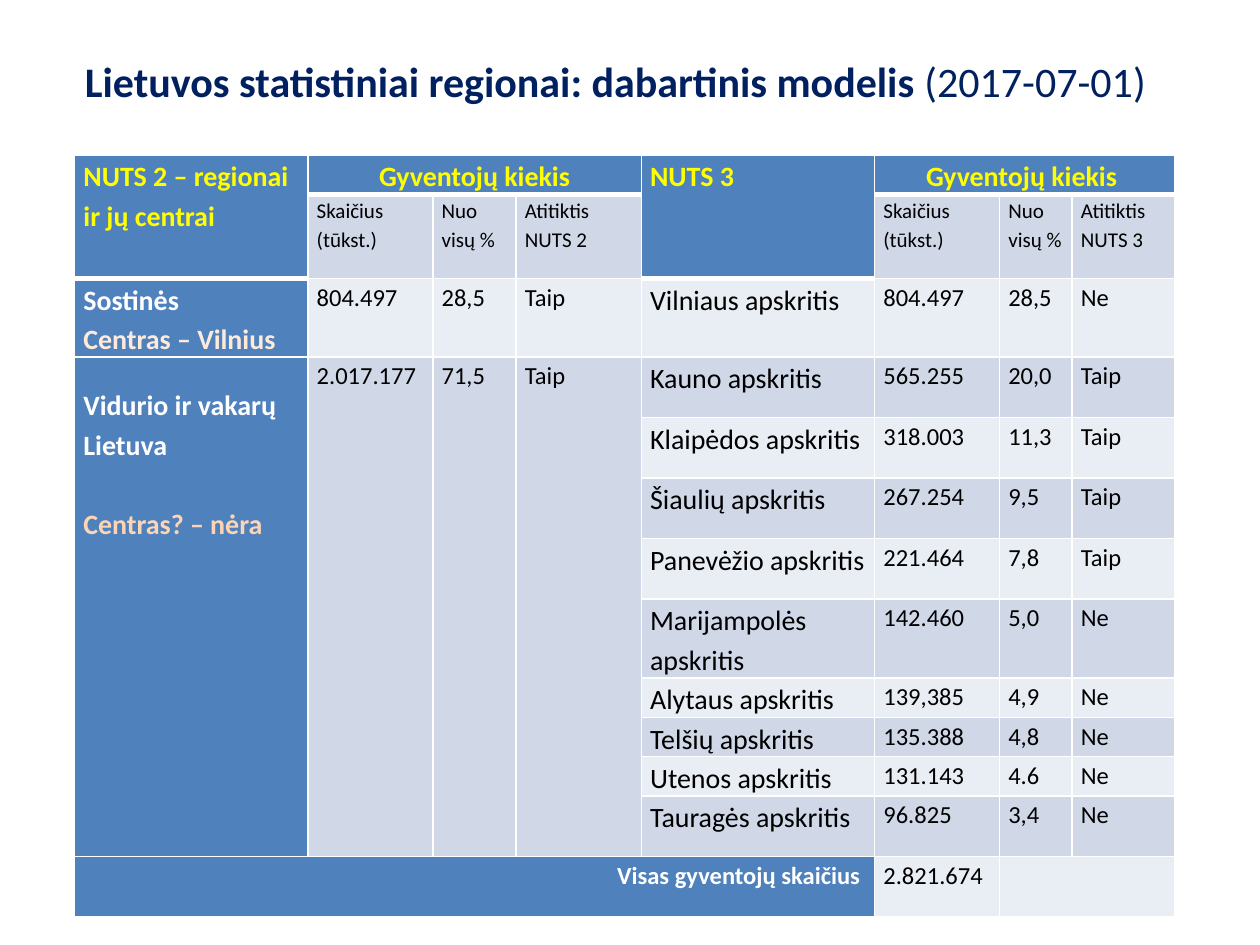
from lxml import etree
from pptx import Presentation
from pptx import util as u
from pptx.dml.color import RGBColor
from pptx.enum import text
from pptx.oxml import ns

NAVY = RGBColor(0x00, 0x20, 0x60)
BLUE = RGBColor(0x4F, 0x81, 0xBD)
DARK_BAND = RGBColor(0xD0, 0xD8, 0xE8)
LIGHT_BAND = RGBColor(0xE9, 0xED, 0xF4)
YELLOW = RGBColor(0xFF, 0xFF, 0x00)
WHITE = RGBColor(0xFF, 0xFF, 0xFF)
BLACK = RGBColor(0x00, 0x00, 0x00)
PALE_ORANGE = RGBColor(0xFD, 0xEA, 0xDA)
ORANGE = RGBColor(0xFC, 0xD5, 0xB5)

LEFT, CENTER, RIGHT = (text.PP_ALIGN.LEFT, text.PP_ALIGN.CENTER, text.PP_ALIGN.RIGHT)

COLUMN_WIDTHS = [133.3, 71.4, 47.6, 71.6, 133.3, 71.4, 41.5, 58.7]
ROW_HEIGHTS = [22.5, 48, 45, 34.6, 34.6, 34.6, 34.6, 45, 22.5, 22.5, 22.5, 34.6, 34.6]
MERGES = [
    (0, 0, 1, 0), (0, 1, 0, 3), (0, 4, 1, 4), (0, 5, 0, 7),
    *[(3, column, 11, column) for column in range(4)],
    (12, 0, 12, 4), (12, 6, 12, 7),
]
COUNTIES = [
    ("Vilniaus apskritis", "804.497", "28,5", "Ne"),
    ("Kauno apskritis", "565.255", "20,0", "Taip"),
    ("Klaipėdos apskritis", "318.003", "11,3", "Taip"),
    ("Šiaulių apskritis", "267.254", "9,5", "Taip"),
    ("Panevėžio apskritis", "221.464", "7,8", "Taip"),
    ("Marijampolės apskritis", "142.460", "5,0", "Ne"),
    ("Alytaus apskritis", "139,385", "4,9", "Ne"),
    ("Telšių apskritis", "135.388", "4,8", "Ne"),
    ("Utenos apskritis", "131.143", "4.6", "Ne"),
    ("Tauragės apskritis", "96.825", "3,4", "Ne"),
]
REGION_FIGURES = {2: ("804.497", "28,5", "Taip"), 3: ("2.017.177", "71,5", "Taip")}


class SlideBuilder:
    font_name = "Calibri"
    line_spacing = 1.15
    inset = 5

    def __init__(self, slide):
        self.slide = slide

    def style(self, paragraph, size, color, bold=False, align=LEFT):
        paragraph.alignment = align
        font = paragraph.font
        font.name, font.size, font.bold = self.font_name, u.Pt(size), bold
        font.color.rgb = color

    def title(self, left, top, width, height, bold_part, plain_part):
        shape = self.slide.shapes.add_textbox(u.Pt(left), u.Pt(top), u.Pt(width), u.Pt(height))
        frame = shape.text_frame
        frame.word_wrap = True
        frame.vertical_anchor = text.MSO_ANCHOR.MIDDLE
        paragraph = frame.paragraphs[0]
        self.style(paragraph, 24, NAVY, align=CENTER)
        for content, bold in ((bold_part, True), (plain_part, False)):
            run = paragraph.add_run()
            run.text = content
            run.font.bold = bold

    def table(self, left, top, widths, heights, merges):
        frame = self.slide.shapes.add_table(
            len(heights), len(widths), u.Pt(left), u.Pt(top),
            u.Pt(sum(widths)), u.Pt(sum(heights)))
        table = frame.table
        table.first_row = table.horz_banding = False
        for column, width in zip(table.columns, widths):
            column.width = u.Pt(width)
        for row, height in zip(table.rows, heights):
            row.height = u.Pt(height)
        for first_row, first_column, last_row, last_column in merges:
            table.cell(first_row, first_column).merge(table.cell(last_row, last_column))
        return table

    def cell(self, cell, fill, bottom_width=1):
        cell.margin_left = cell.margin_right = u.Pt(self.inset)
        cell.margin_top = cell.margin_bottom = 0
        self.style(cell.text_frame.paragraphs[0], 12, BLACK)
        properties = cell._tc.get_or_add_tcPr()
        for side, width in (("L", 1), ("R", 1), ("T", 1), ("B", bottom_width)):
            line = etree.SubElement(properties, ns.qn(f"a:ln{side}"), w=str(u.Pt(width)))
            solid = etree.SubElement(line, ns.qn("a:solidFill"))
            etree.SubElement(solid, ns.qn("a:srgbClr"), val=str(WHITE))
        cell.fill.solid()
        cell.fill.fore_color.rgb = fill

    def cell_text(self, cell, content, size, color=BLACK, bold=False, align=LEFT):
        paragraph = cell.text_frame.paragraphs[0]
        if paragraph.text:
            paragraph = cell.text_frame.add_paragraph()
        paragraph.text = content
        paragraph.line_spacing = self.line_spacing
        self.style(paragraph, size, color, bold, align)
        return paragraph


def cell_fill(row, column):
    if row == 0 or column == 0 or (row == 1 and column == 4) or (row == 12 and column < 5):
        return BLUE
    return DARK_BAND if row % 2 else LIGHT_BAND


def main():
    presentation = Presentation()
    presentation.slide_width, presentation.slide_height = u.Pt(720), u.Pt(540)
    builder = SlideBuilder(presentation.slides.add_slide(presentation.slide_layouts[6]))
    builder.title(25.2, 21, 653, 50,
                  "Lietuvos statistiniai regionai: dabartinis modelis ", "(2017-07-01)")
    table = builder.table(42.7, 88.6, COLUMN_WIDTHS, ROW_HEIGHTS, MERGES)

    for row in range(len(ROW_HEIGHTS)):
        for column in range(len(COLUMN_WIDTHS)):
            header = row == 0 or (row == 1 and column in (0, 4))
            builder.cell(table.cell(row, column), cell_fill(row, column), 3 if header else 1)

    headers = [
        (0, "NUTS 2 – regionai ir jų centrai", LEFT), (1, "Gyventojų kiekis", CENTER),
        (4, "NUTS 3", LEFT), (5, "Gyventojų kiekis ", CENTER),
    ]
    for column, content, align in headers:
        builder.cell_text(table.cell(0, column), content, 16, YELLOW, True, align)
    for start, level in ((1, "NUTS 2"), (5, "NUTS 3")):
        for offset, content in enumerate(("Skaičius (tūkst.)", "Nuo visų %", f"Atitiktis {level}")):
            builder.cell_text(table.cell(1, start + offset), content, 12)

    capital, rest = table.cell(2, 0), table.cell(3, 0)
    builder.cell_text(capital, "Sostinės", 16, WHITE, True)
    builder.cell_text(capital, "Centras – Vilnius", 16, PALE_ORANGE, True)
    rest.margin_top = u.Pt(15.5)
    builder.cell_text(rest, "Vidurio ir vakarų Lietuva", 16, WHITE, True)
    builder.cell_text(rest, "Centras? – nėra", 16, ORANGE, True).space_before = u.Pt(22.5)

    for row, figures in REGION_FIGURES.items():
        for column, figure in enumerate(figures, 1):
            builder.cell_text(table.cell(row, column), figure, 14)
    for row, (county, *figures) in enumerate(COUNTIES, 2):
        builder.cell_text(table.cell(row, 4), county, 16)
        for column, figure in enumerate(figures, 5):
            builder.cell_text(table.cell(row, column), figure, 14)

    builder.cell_text(table.cell(12, 0), "Visas gyventojų skaičius ", 14, WHITE, True, RIGHT)
    builder.cell_text(table.cell(12, 5), "2.821.674", 14)
    presentation.save("out.pptx")


if __name__ == "__main__":
    main()
